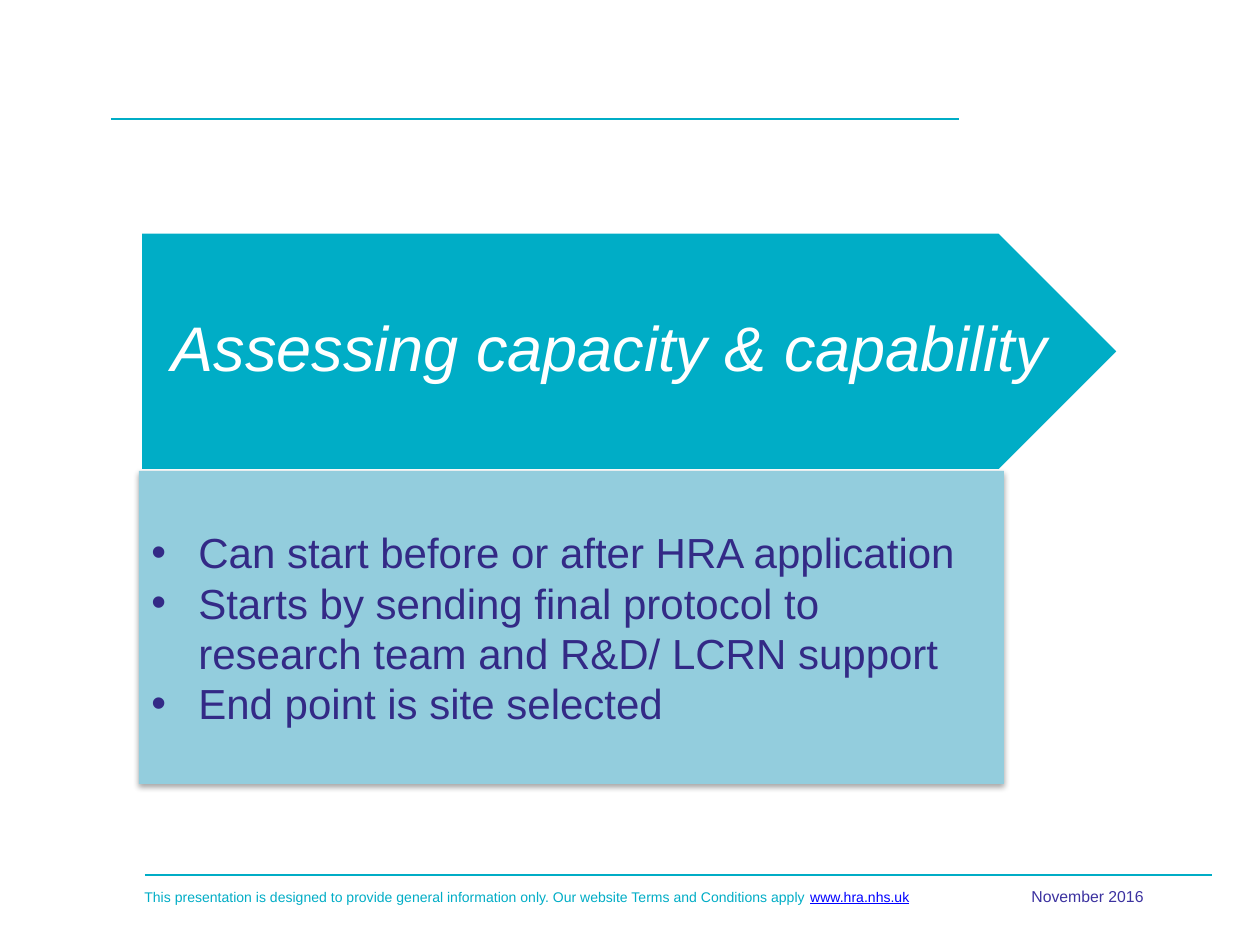
from lxml.etree import SubElement
from pptx import Presentation
from pptx.dml.color import RGBColor
from pptx.enum.shapes import MSO_CONNECTOR, MSO_SHAPE
from pptx.enum.text import MSO_ANCHOR, MSO_AUTO_SIZE, PP_ALIGN
from pptx.oxml.ns import qn
from pptx.util import Emu, Pt

PX_PER_INCH = 126
FONT = "Arial"
TEAL = RGBColor(0x00, 0xAD, 0xC6)
PALE_BLUE = RGBColor(0x93, 0xCD, 0xDD)
INDIGO = RGBColor(0x33, 0x2A, 0x86)
VIOLET = RGBColor(0x3C, 0x32, 0xA0)
LINK_BLUE = RGBColor(0x00, 0x00, 0xFF)
WHITE = RGBColor(0xFF, 0xFF, 0xFF)

POINTS = [
    "Can start before or after HRA application",
    "Starts by sending final protocol to research team and R&D/ LCRN support",
    "End point is site selected",
]


def px(n):
    return Emu(round(n * 914400 / PX_PER_INCH))


def add_run(p, text, size, color, italic=None, underline=None):
    r = p.add_run()
    r.text = text
    r.font.name = FONT
    r.font.size = Pt(size)
    r.font.color.rgb = color
    r.font.italic = italic
    r.font.underline = underline


def add_rule(s, x1, x2, y):
    line = s.shapes.add_connector(MSO_CONNECTOR.STRAIGHT, px(x1), px(y), px(x2), px(y))
    line.line.color.rgb = TEAL
    line.line.width = Pt(1)
    SubElement(line._element.spPr, qn("a:effectLst"))


def add_block(s, kind, box, fill):
    sp = s.shapes.add_shape(kind, *map(px, box))
    sp.shadow.inherit = False
    sp.fill.solid()
    sp.fill.fore_color.rgb = fill
    sp.line.fill.background()
    return sp


def add_text(s, box):
    tf = s.shapes.add_textbox(*map(px, box)).text_frame
    tf.word_wrap = True
    return tf.paragraphs[0]


def add_soft_shadow(sp):
    effects = sp._element.spPr.find(qn("a:effectLst"))
    shadow = SubElement(effects, qn("a:outerShdw"), blurRad=str(Pt(3.1)),
                        dist=str(Pt(1.8)), dir="5400000", rotWithShape="0")
    color = SubElement(shadow, qn("a:srgbClr"), val="000000")
    SubElement(color, qn("a:alpha"), val="35000")


def add_bullet(p, indent):
    pPr = p._p.get_or_add_pPr()
    pPr.set("marL", str(indent))
    pPr.set("indent", str(-indent))
    SubElement(pPr, qn("a:buFont"), typeface=FONT)
    SubElement(pPr, qn("a:buChar"), char="•")


def set_title(s, text, box):
    title = s.shapes.title
    title.left, title.top, title.width, title.height = map(px, box)
    tf = title.text_frame
    tf.word_wrap = True
    tf.auto_size = MSO_AUTO_SIZE.NONE
    tf.vertical_anchor = MSO_ANCHOR.MIDDLE
    tf.margin_left, tf.margin_right = px(26), px(6)
    tf.margin_top = tf.margin_bottom = px(13)
    p = tf.paragraphs[0]
    p.alignment = PP_ALIGN.CENTER
    p.line_spacing = 0.9
    add_run(p, text, 36, WHITE, italic=True)
    # Bring the title in front of the arrow
    s.shapes._spTree.append(title._element)


def add_bullet_panel(s, points, box):
    panel = add_block(s, MSO_SHAPE.RECTANGLE, box, PALE_BLUE)
    add_soft_shadow(panel)
    tf = panel.text_frame
    tf.word_wrap = True
    tf.vertical_anchor = MSO_ANCHOR.MIDDLE
    for i, text in enumerate(points):
        p = tf.add_paragraph() if i else tf.paragraphs[0]
        p.alignment = PP_ALIGN.LEFT
        add_bullet(p, px(47))
        add_run(p, text, 24, INDIGO)


def main():
    prs = Presentation()
    prs.slide_width, prs.slide_height = px(1260), px(945)
    s = prs.slides.add_slide(prs.slide_layouts[5])

    # Header and footer rules
    add_rule(s, 111, 959, 119)
    add_rule(s, 145, 1212, 875)

    # Footer note
    p = add_text(s, (132, 882, 801, 30))
    add_run(p, "This presentation is designed to provide general information only. "
               "Our website Terms and Conditions apply ", 8, TEAL)
    add_run(p, "www.hra.nhs.uk", 8, LINK_BLUE, underline=True)

    # Arrow with the title
    arrow = add_block(s, MSO_SHAPE.PENTAGON, (140, 232, 979, 239), TEAL)
    arrow.line.color.rgb = WHITE
    arrow.line.width = Pt(2)
    set_title(s, "Assessing capacity & capability", (140, 232, 919, 239))

    # Key points
    add_bullet_panel(s, POINTS, (139, 471, 865, 313))

    # Date
    p = add_text(s, (961, 881, 253, 50))
    p.alignment = PP_ALIGN.CENTER
    add_run(p, "November 2016", 9, VIOLET)

    prs.save("out.pptx")


if __name__ == "__main__":
    main()
